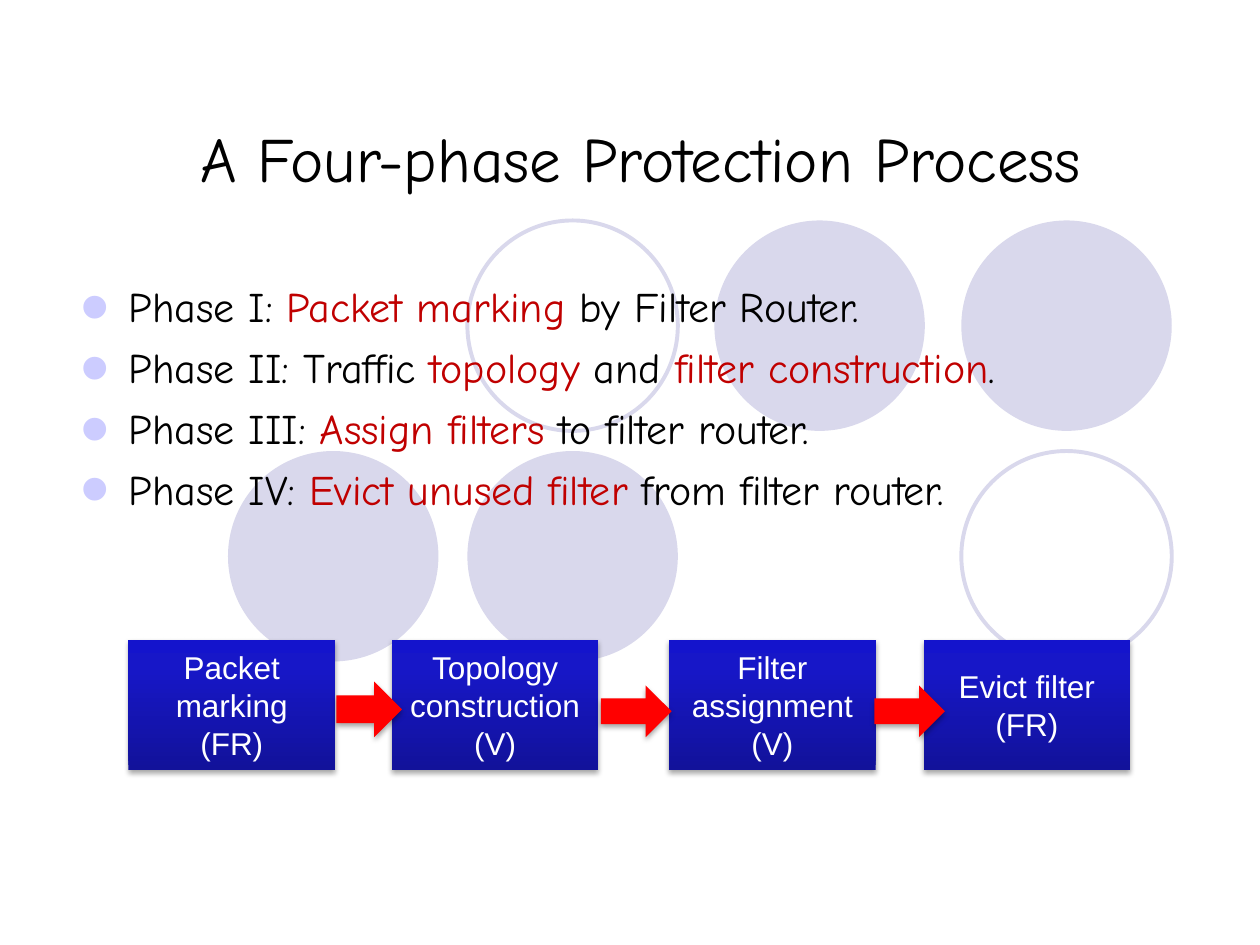
from dataclasses import dataclass

from pptx import Presentation
from pptx.dml.color import RGBColor
from pptx.enum.shapes import MSO_SHAPE
from pptx.enum.text import MSO_ANCHOR, MSO_AUTO_SIZE, PP_ALIGN
from pptx.oxml import parse_xml
from pptx.oxml.ns import nsdecls
from pptx.util import Inches, Pt

OVAL, RECT, ARROW = MSO_SHAPE.OVAL, MSO_SHAPE.RECTANGLE, MSO_SHAPE.RIGHT_ARROW
TOP, MIDDLE, BOTTOM = MSO_ANCHOR.TOP, MSO_ANCHOR.MIDDLE, MSO_ANCHOR.BOTTOM
LEFT, CENTER = PP_ALIGN.LEFT, PP_ALIGN.CENTER
NO_FIT = MSO_AUTO_SIZE.NONE


@dataclass(frozen=True)
class Theme:
    text: str = "000000"
    accent: str = "C00000"
    circle: str = "D9D8EC"
    bullet: str = "CCCCFF"
    arrow: str = "FF0000"
    box_text: str = "FFFFFF"
    box_stops: tuple = ((0, "12129A"), (80, "1717C8"), (100, "1414CC"))
    hand_font: str = "Comic Neue"
    box_font: str = "Arial"
    title_size: int = 36
    body_size: int = 24
    box_size: int = 18


theme = Theme()


def style_run(r, size, font, color):
    r.font.size = Pt(size)
    r.font.name = font
    r.font.color.rgb = RGBColor.from_string(color)


def add_shadow(sp):
    sp.line.fill.background()
    sp._element.spPr.append(parse_xml(
        f'<a:effectLst {nsdecls("a")}><a:outerShdw blurRad="{Pt(3.1)}" dist="{Pt(1.8)}" '
        'dir="5400000" rotWithShape="0"><a:srgbClr val="000000">'
        '<a:alpha val="35000"/></a:srgbClr></a:outerShdw></a:effectLst>'))


prs = Presentation()
prs.slide_width, prs.slide_height = Inches(10), Inches(7.5)
s = prs.slides.add_slide(prs.slide_layouts[1])
title, body = s.shapes.title, s.placeholders[1]

# Background circles: left, top, filled
circles = [(7.63, 1.75, True), (5.67, 1.75, True), (3.71, 1.75, False),
           (3.71, 3.58, True), (1.81, 3.58, True), (7.63, 3.58, False)]
for x, y, filled in circles:
    sp = s.shapes.add_shape(OVAL, Inches(x), Inches(y), Inches(1.67), Inches(1.67))
    sp.shadow.inherit = False
    if filled:
        sp.fill.solid()
        sp.fill.fore_color.rgb = RGBColor.from_string(theme.circle)
        sp.line.fill.background()
    else:
        sp.fill.background()
        sp.line.color.rgb = RGBColor.from_string(theme.circle)
        sp.line.width = Pt(2.25)

# Bring the placeholders in front of the circles
for ph in (title, body):
    s.shapes._spTree.append(ph._element)

# Title
title.left, title.top = Inches(0.5), Inches(0.35)
title.width, title.height = Inches(9.17), Inches(1.25)
tf = title.text_frame
tf.text = "A Four-phase Protection Process"
tf.auto_size = NO_FIT
tf.vertical_anchor = BOTTOM
p = tf.paragraphs[0]
p.alignment = CENTER
style_run(p.runs[0], theme.title_size, theme.hand_font, theme.text)

# Phase list: (text, accented)
phases = [
    [("Phase I: ", False), ("Packet marking ", True), ("by Filter Router.", False)],
    [("Phase II: Traffic ", False), ("topology", True), (" and ", False),
     ("filter construction", True), (".", False)],
    [("Phase III: ", False), ("Assign filters ", True), ("to filter router.", False)],
    [("Phase IV: ", False), ("Evict unused filter ", True), ("from filter router.", False)],
]
body.left, body.top = Inches(0.58), Inches(1.76)
body.width, body.height = Inches(9.17), Inches(5.26)
tf = body.text_frame
tf.auto_size = NO_FIT
tf.vertical_anchor = TOP
tf.margin_left = tf.margin_right = tf.margin_bottom = 0
tf.margin_top = Inches(0.47)
for i, phase in enumerate(phases):
    p = tf.add_paragraph() if i else tf.paragraphs[0]
    p.alignment = LEFT
    p.space_before = Pt(6)
    pPr = p._p.get_or_add_pPr()
    pPr.set("marL", str(Inches(0.44)))
    pPr.set("indent", str(Inches(-0.38)))
    for bullet in (f'<a:buClr {nsdecls("a")}><a:srgbClr val="{theme.bullet}"/></a:buClr>',
                   f'<a:buSzPct {nsdecls("a")} val="200000"/>',
                   f'<a:buFont {nsdecls("a")} typeface="Arial"/>',
                   f'<a:buChar {nsdecls("a")} char="•"/>'):
        pPr.append(parse_xml(bullet))
    for text, accented in phase:
        r = p.add_run()
        r.text = text
        style_run(r, theme.body_size, theme.hand_font,
                  theme.accent if accented else theme.text)

# Process boxes
boxes = [(1.02, "Packet marking (FR)"), (3.11, "Topology construction (V)"),
         (5.31, "Filter assignment (V)"), (7.33, "Evict filter (FR)")]
stops = "".join(f'<a:gs pos="{pos * 1000}"><a:srgbClr val="{color}"/></a:gs>'
                for pos, color in theme.box_stops)
for x, label in boxes:
    sp = s.shapes.add_shape(RECT, Inches(x), Inches(5.08), Inches(1.64), Inches(1.03))
    sp._element.spPr.append(parse_xml(
        f'<a:gradFill {nsdecls("a")} rotWithShape="1"><a:gsLst>{stops}</a:gsLst>'
        '<a:lin ang="16200000" scaled="0"/></a:gradFill>'))
    add_shadow(sp)
    tf = sp.text_frame
    tf.text = label
    tf.word_wrap = True
    tf.vertical_anchor = MIDDLE
    p = tf.paragraphs[0]
    p.alignment = CENTER
    style_run(p.runs[0], theme.box_size, theme.box_font, theme.box_text)

# Arrows between the boxes
arrows = [(2.67, 5.41, 0.52, 0.44), (4.77, 5.44, 0.56, 0.41), (6.94, 5.44, 0.56, 0.41)]
for x, y, w, h in arrows:
    sp = s.shapes.add_shape(ARROW, Inches(x), Inches(y), Inches(w), Inches(h))
    sp.fill.solid()
    sp.fill.fore_color.rgb = RGBColor.from_string(theme.arrow)
    add_shadow(sp)

prs.save("out.pptx")
